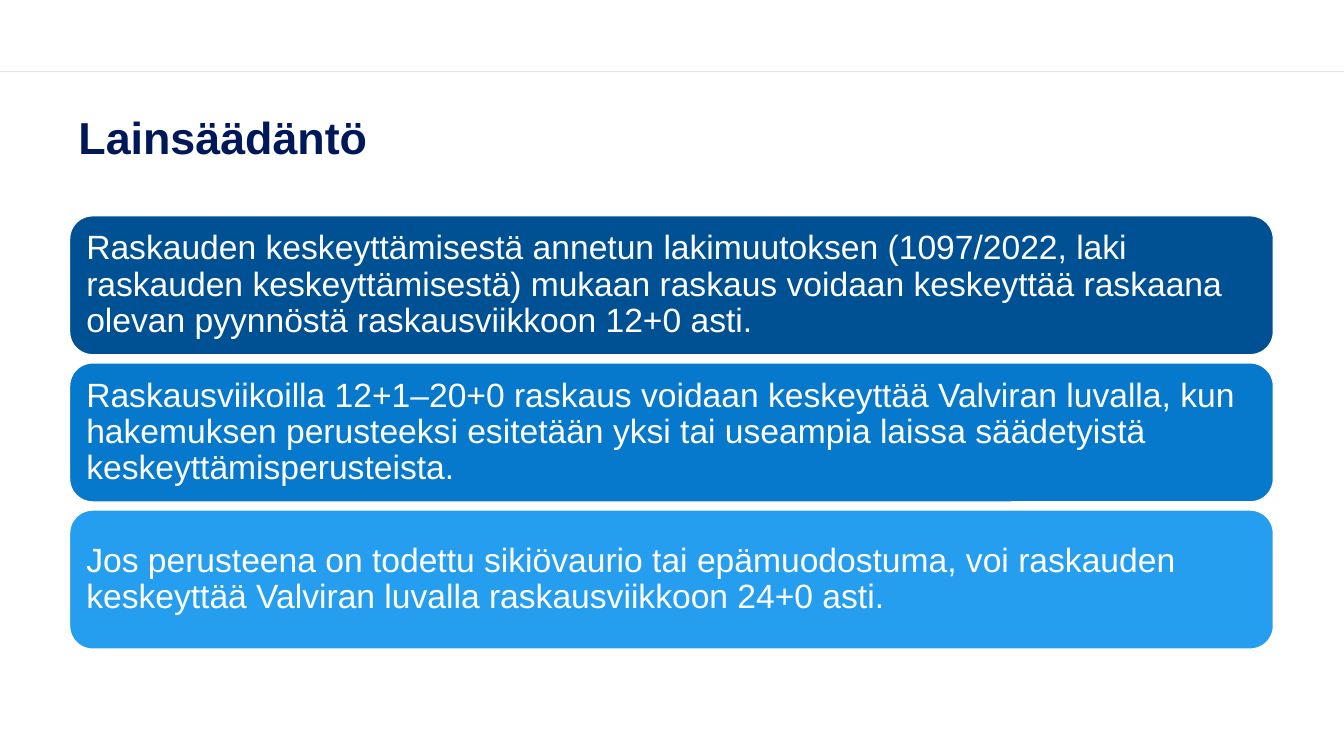
from dataclasses import dataclass

from lxml import etree
from pptx import Presentation
from pptx.dml.color import RGBColor
from pptx.enum.shapes import MSO_CONNECTOR, MSO_SHAPE
from pptx.enum.text import MSO_ANCHOR, PP_ALIGN
from pptx.oxml.ns import qn
from pptx.slide import Slide
from pptx.text.text import TextFrame
from pptx.util import Inches, Pt

ROUND = MSO_SHAPE.ROUNDED_RECTANGLE
STRAIGHT = MSO_CONNECTOR.STRAIGHT
MIDDLE = MSO_ANCHOR.MIDDLE
LEFT = PP_ALIGN.LEFT

WIDTH = 13.33
EDGE = 0.69
SPAN = 11.94
TOP = 2.14
TALL = 1.38
PITCH = 1.46


@dataclass(frozen=True)
class Card:
    text: str
    fill: str


CARDS = [
    Card("Raskauden keskeyttämisestä annetun lakimuutoksen (1097/2022, laki "
         "raskauden keskeyttämisestä) mukaan raskaus voidaan keskeyttää "
         "raskaana olevan pyynnöstä raskausviikkoon 12+0 asti.", "005193"),
    Card("Raskausviikoilla 12+1–20+0 raskaus voidaan keskeyttää Valviran "
         "luvalla, kun hakemuksen perusteeksi esitetään yksi tai useampia "
         "laissa säädetyistä keskeyttämisperusteista.", "0779CD"),
    Card("Jos perusteena on todettu sikiövaurio tai epämuodostuma, voi "
         "raskauden keskeyttää Valviran luvalla raskausviikkoon 24+0 asti.",
         "269EEF"),
]


def color(code: str) -> RGBColor:
    return RGBColor.from_string(code)


def write(frame: TextFrame, text: str, size: int, tint: str,
          bold: bool = False) -> None:
    frame.word_wrap = True
    frame.vertical_anchor = MIDDLE
    frame.margin_left = frame.margin_right = Inches(0.1)
    frame.margin_top = frame.margin_bottom = Inches(0.1)
    para = frame.paragraphs[0]
    para.text = text
    para.alignment = LEFT
    para.line_spacing = 0.9
    font = para.font
    font.name = "Arial"
    font.size = Pt(size)
    font.bold = bold
    font.color.rgb = color(tint)


def add_rule(slide: Slide, y: float) -> None:
    rule = slide.shapes.add_connector(
        STRAIGHT, Inches(0), Inches(y), Inches(WIDTH), Inches(y))
    rule.line.width = Pt(1)
    rule.line.color.rgb = color("000000")
    props = rule._element.spPr
    tone = props.find(".//" + qn("a:srgbClr"))
    etree.SubElement(tone, qn("a:alpha")).set("val", "10000")
    etree.SubElement(props, qn("a:effectLst"))


def add_title(slide: Slide, text: str) -> None:
    box = slide.shapes.add_textbox(
        Inches(0.68), Inches(0.93), Inches(SPAN), Inches(0.91))
    write(box.text_frame, text, 32, "001759", bold=True)


def add_card(slide: Slide, card: Card, y: float) -> None:
    shape = slide.shapes.add_shape(
        ROUND, Inches(EDGE), Inches(y), Inches(SPAN), Inches(TALL))
    shape.shadow.inherit = False
    shape.fill.solid()
    shape.fill.fore_color.rgb = color(card.fill)
    shape.line.color.rgb = color("FFFFFF")
    shape.line.width = Pt(1)
    write(shape.text_frame, card.text, 24, "FFFFFF")


def main() -> None:
    deck = Presentation()
    deck.slide_width = Inches(WIDTH)
    deck.slide_height = Inches(7.5)
    slide = deck.slides.add_slide(deck.slide_layouts[6])
    add_rule(slide, 0.71)
    add_title(slide, "Lainsäädäntö")
    for row, card in enumerate(CARDS):
        add_card(slide, card, TOP + row * PITCH)
    deck.save("out.pptx")


if __name__ == "__main__":
    main()
